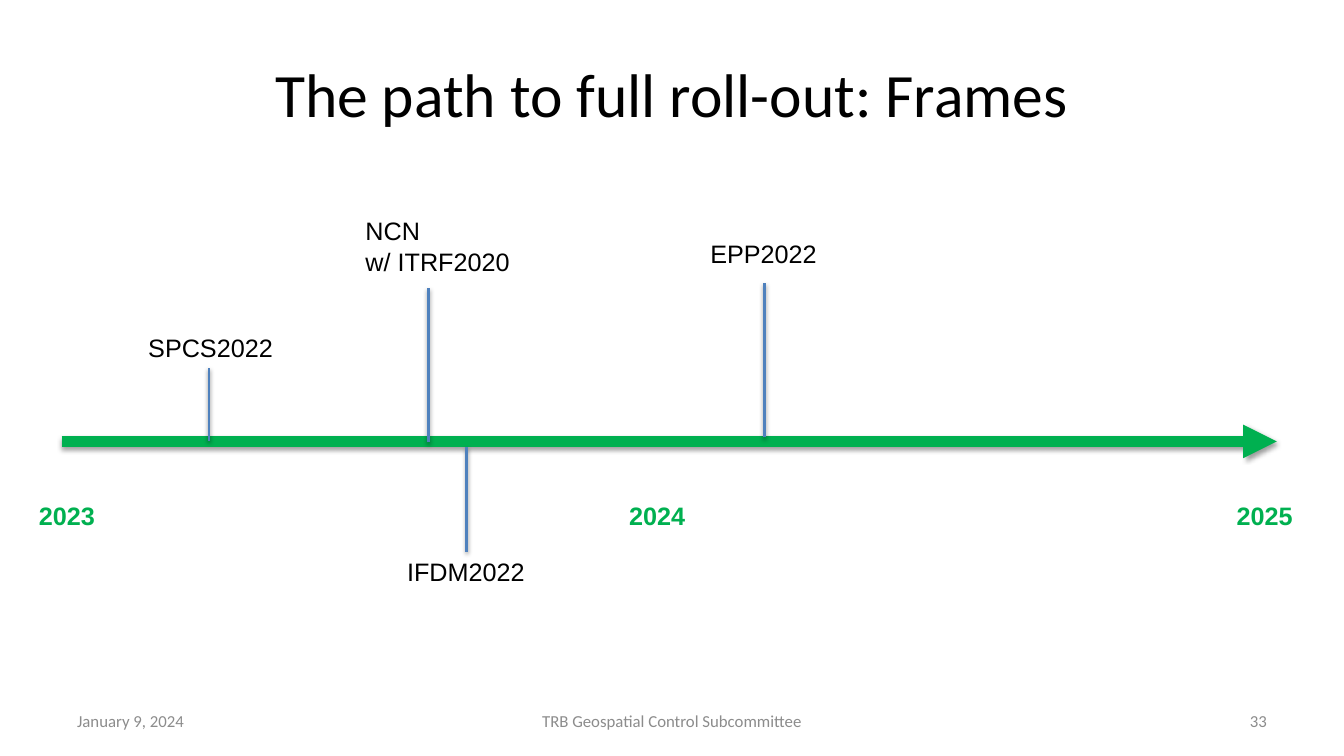
from lxml import etree
from pptx import Presentation
from pptx.dml.color import RGBColor
from pptx.enum import shapes, text
from pptx.oxml import ns
from pptx.util import Pt

GREEN, BLUE, GREY, BLACK = "00B050", "4F81BD", "8C8C8C", "000000"
AXIS_Y = 315.3


def colour(code):
    return RGBColor.from_string(code)


def write(frame, content, font="Arial", size=18, color=BLACK, bold=False,
          align=text.PP_ALIGN.LEFT, anchor=text.MSO_ANCHOR.TOP):
    """Fill a text frame, one paragraph per line of content."""
    frame.text = content
    frame.vertical_anchor = anchor
    for paragraph in frame.paragraphs:
        paragraph.alignment = align
        paragraph.font.name = font
        paragraph.font.size = Pt(size)
        paragraph.font.bold = bold
        paragraph.font.color.rgb = colour(color)


class TimelineSlide:
    def __init__(self, deck):
        self.slide = deck.slides.add_slide(deck.slide_layouts[5])

    def title(self, content):
        heading = self.slide.shapes.title
        heading.left, heading.top = Pt(48), Pt(21.6)
        heading.width, heading.height = Pt(864), Pt(90)
        write(heading.text_frame, content, font="Calibri", size=44,
              align=text.PP_ALIGN.CENTER, anchor=text.MSO_ANCHOR.MIDDLE)

    def label(self, content, left, top, width, height=29, wrap=False, **style):
        frame = self.slide.shapes.add_textbox(
            Pt(left), Pt(top), Pt(width), Pt(height)).text_frame
        frame.word_wrap = wrap
        if not wrap:
            frame.auto_size = text.MSO_AUTO_SIZE.SHAPE_TO_FIT_TEXT
        write(frame, content, **style)

    def footer(self, content, left, width, align):
        self.label(content, left, 500.5, width, wrap=True, font="Calibri",
                   size=12, color=GREY, align=align,
                   anchor=text.MSO_ANCHOR.MIDDLE)

    def line(self, x1, y1, x2, y2, color=BLUE, weight=2, arrow=False):
        """Draw a straight line with a soft shadow below it."""
        connector = self.slide.shapes.add_connector(
            shapes.MSO_CONNECTOR.STRAIGHT, Pt(x1), Pt(y1), Pt(x2), Pt(y2))
        connector.line.color.rgb = colour(color)
        connector.line.width = Pt(weight)
        properties = connector.element.spPr
        if arrow:
            etree.SubElement(properties.find(ns.qn("a:ln")),
                             ns.qn("a:tailEnd"), type="triangle")
        effects = etree.SubElement(properties, ns.qn("a:effectLst"))
        shadow = etree.SubElement(
            effects, ns.qn("a:outerShdw"), blurRad=str(Pt(3.1)),
            dist=str(Pt(1.6)), dir="5400000", rotWithShape="0")
        tint = etree.SubElement(shadow, ns.qn("a:srgbClr"), val=BLACK)
        etree.SubElement(tint, ns.qn("a:alpha"), val="38000")


def main():
    deck = Presentation()
    deck.slide_width, deck.slide_height = Pt(960), Pt(540)
    timeline = TimelineSlide(deck)
    timeline.title("The path to full roll-out: Frames")

    timeline.footer("January 9, 2024", 48, 224, text.PP_ALIGN.LEFT)
    timeline.footer("TRB Geospatial Control Subcommittee", 328, 304,
                    text.PP_ALIGN.CENTER)
    timeline.footer("33", 688, 224, text.PP_ALIGN.RIGHT)

    timeline.line(44, AXIS_Y, 912, AXIS_Y, GREEN, weight=8, arrow=True)
    for year, left in (("2023", 20.7), ("2024", 442.3), ("2025", 876.2)):
        timeline.label(year, left, 353.5, 55, color=GREEN, bold=True)

    # name, label left, top, width, height, then marker x, start y, end y
    milestones = (
        ("IFDM2022", 283.7, 394, 99.5, 29, 333.5, 394, 319),
        ("NCN\nw/ ITRF2020", 254, 150.5, 119, 51, 306, 316, 205.5),
        ("EPP2022", 500.3, 167, 91.5, 29, 546, 312.5, 202),
        ("SPCS2022", 98.8, 234, 104.5, 29, 149.3, 315, 263),
    )
    for name, left, top, width, height, x, start, end in milestones:
        timeline.line(x, start, x, end)
        timeline.label(name, left, top, width, height)

    deck.save("out.pptx")


if __name__ == "__main__":
    main()
